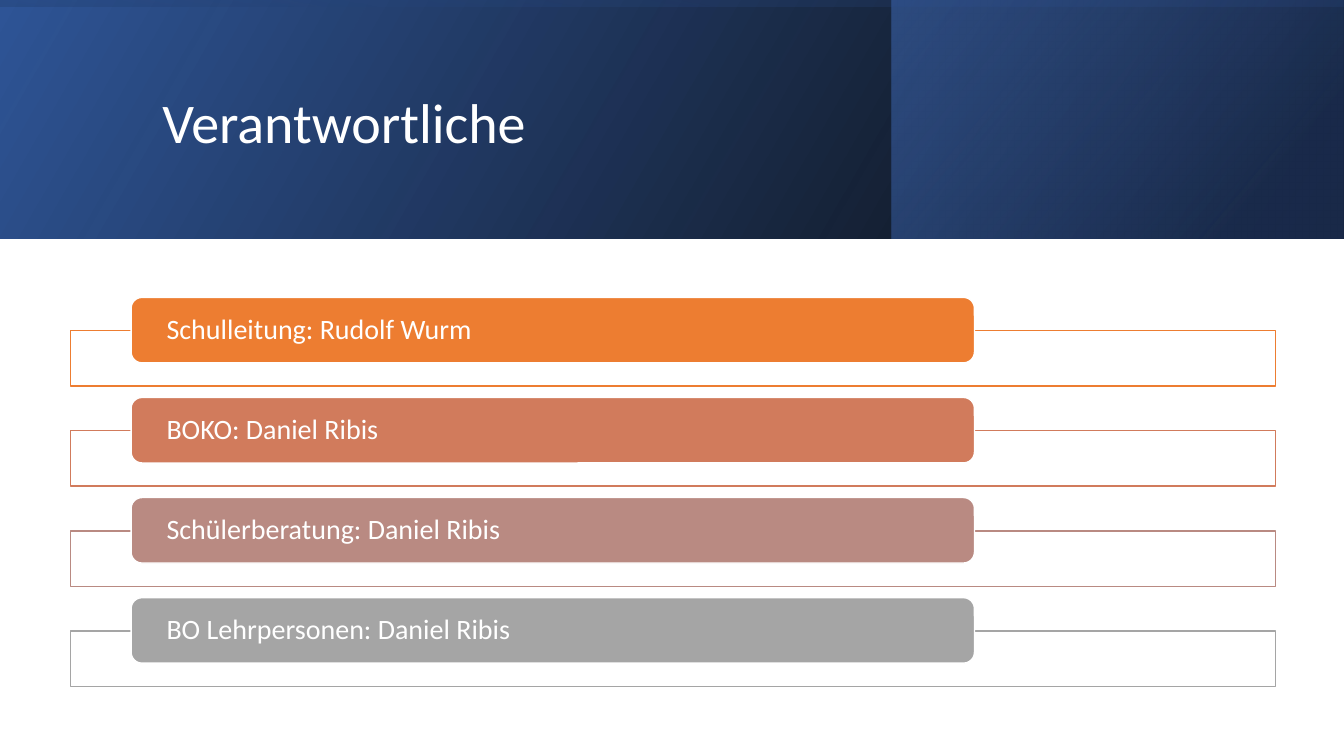
from lxml import etree
from pptx import Presentation
from pptx.dml.color import RGBColor
from pptx.enum.shapes import MSO_SHAPE
from pptx.enum.text import MSO_ANCHOR
from pptx.oxml import parse_xml
from pptx.oxml.ns import nsdecls, qn
from pptx.util import Inches, Pt

RECT = MSO_SHAPE.RECTANGLE
ROUND = MSO_SHAPE.ROUNDED_RECTANGLE
MIDDLE = MSO_ANCHOR.MIDDLE
FONT = "Calibri"
WHITE = "FFFFFF"
WIDTH, HEIGHT = 13.33, 7.5
ROLES = [
    ("Schulleitung: Rudolf Wurm", "ED7D31"),
    ("BOKO: Daniel Ribis", "D17B5C"),
    ("Schülerberatung: Daniel Ribis", "B98A82"),
    ("BO Lehrpersonen: Daniel Ribis", "A5A5A5"),
]


def color(value):
    """Turn a hex string into a colour."""
    return RGBColor.from_string(value)


def add_box(slide, kind, left, top, width, height):
    """Add a preset shape without shadow."""
    box = slide.shapes.add_shape(
        kind, Inches(left), Inches(top), Inches(width), Inches(height))
    box.shadow.inherit = False
    return box


def paint(box, fill, line):
    """Give a shape a plain fill and a thin outline."""
    box.fill.solid()
    box.fill.fore_color.rgb = color(fill)
    box.line.color.rgb = color(line)
    box.line.width = Pt(1)


def shade(box, angle, stops):
    """Fill a mirrored shape with a translucent gradient and no outline."""
    marks = "".join(
        f'<a:gs pos="{place * 1000}"><a:srgbClr val="{tint}">'
        f'<a:alpha val="{alpha * 1000}"/></a:srgbClr></a:gs>'
        for place, tint, alpha in stops)
    box.line.fill.background()
    props = box._element.spPr
    props.find(qn("a:xfrm")).set("flipH", "1")
    props.find(qn("a:prstGeom")).addnext(parse_xml(
        f'<a:gradFill {nsdecls("a")}><a:gsLst>{marks}</a:gsLst>'
        f'<a:lin ang="{angle * 60000}" scaled="0"/></a:gradFill>'))


def add_banner(slide, left, top, width, height):
    """Draw the layered header band."""
    base = add_box(slide, RECT, left, top, width, height)
    shade(base, 330, [(0, "000000", 96), (100, "2F5597", 100)])
    side = add_box(slide, RECT, left + 8.84, top, 4.48, height)
    shade(side, 320, [(19, "203864", 68), (100, "4472C4", 48)])
    shift = (width - height) / 2
    veil = add_box(slide, RECT, left + shift, top - shift, height, width)
    veil.rotation = 270
    shade(veil, 350, [(23, "2F5597", 16), (99, "000000", 45)])


def write(frame, text, size):
    """Set one white line of text, centred vertically."""
    frame.text = text
    frame.word_wrap = True
    frame.vertical_anchor = MIDDLE
    line = frame.paragraphs[0]
    line.line_spacing = 0.9
    line.font.name = FONT
    line.font.size = Pt(size)
    line.font.color.rgb = color(WHITE)


def set_title(slide, left, top, width, height):
    """Place the title over the banner."""
    title = slide.shapes.title
    title.left, title.top = Inches(left), Inches(top)
    title.width, title.height = Inches(width), Inches(height)
    write(title.text_frame, "Verantwortliche", 40)
    title.text_frame.paragraphs[0].alignment = 1
    tree = slide.shapes._spTree
    tree.remove(title._element)
    tree.append(title._element)


def add_role(slide, left, top, width, text, tint):
    """Draw one outlined frame with its label pill."""
    frame = add_box(slide, RECT, left, top + 0.33, width, 0.55)
    paint(frame, WHITE, tint)
    tone = frame._element.spPr.find(qn("a:solidFill"))[0]
    etree.SubElement(tone, qn("a:alpha")).set("val", "90000")
    pill = add_box(slide, ROUND, left + 0.6, top, width * 0.7, 0.65)
    paint(pill, tint, WHITE)
    body = pill.text_frame
    write(body, text, 20)
    body.margin_left = body.margin_right = Inches(0.32)
    body.margin_top = body.margin_bottom = 0
    body.paragraphs[0].alignment = 1


def add_roles(slide, left, top, width, pitch):
    """Stack the roles at an equal pitch."""
    for index, (text, tint) in enumerate(ROLES):
        add_role(slide, left, top + index * pitch, width, text, tint)


def main():
    """Build and save the slide."""
    deck = Presentation()
    deck.slide_width, deck.slide_height = Inches(WIDTH), Inches(HEIGHT)
    slide = deck.slides.add_slide(deck.slide_layouts[5])
    add_banner(slide, 0, 0, WIDTH, 2.37)
    set_title(slide, 1.51, 0.38, 10.63, 1.72)
    add_roles(slide, 0.7, 2.95, 11.95, 0.993)
    deck.save("out.pptx")


if __name__ == "__main__":
    main()
